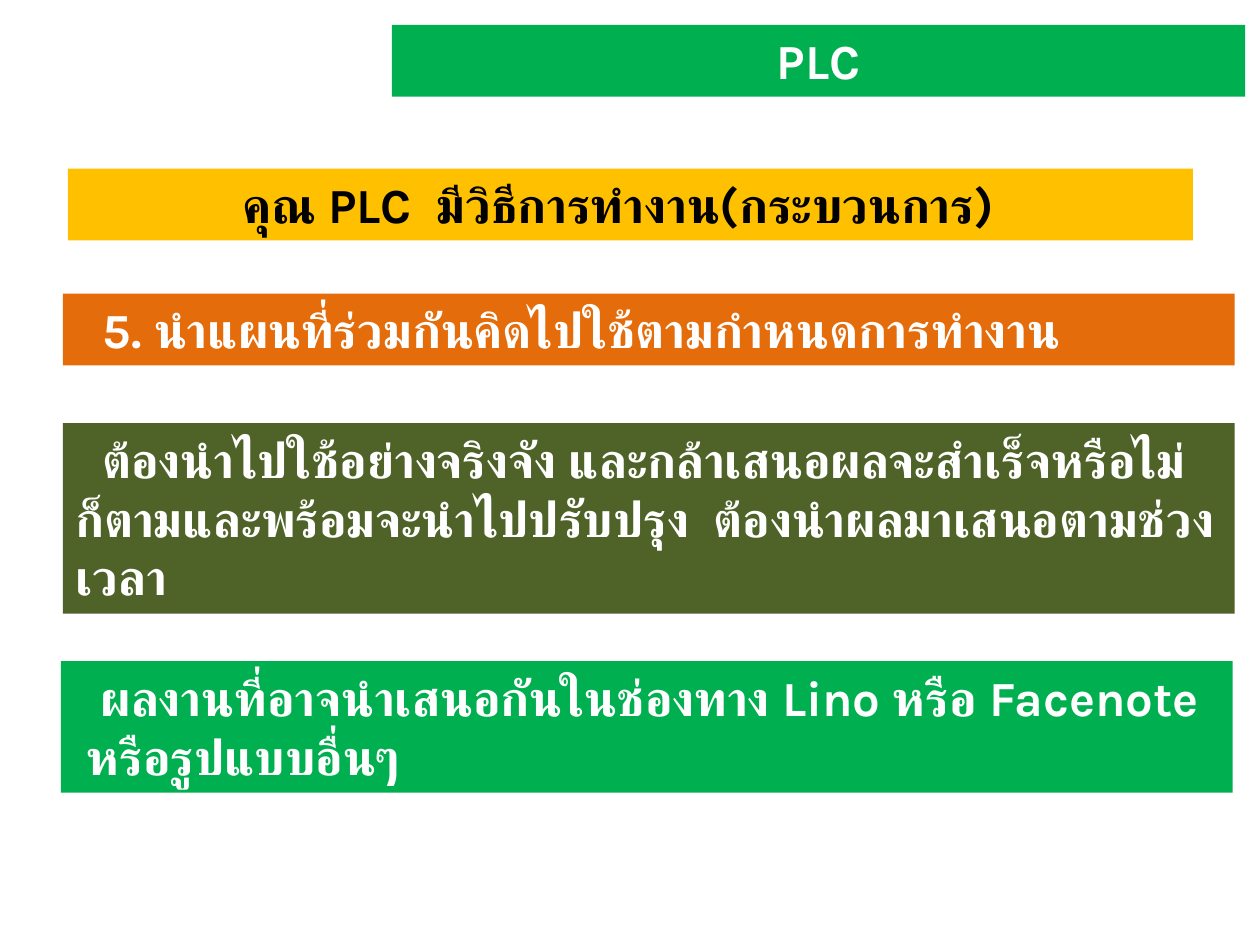
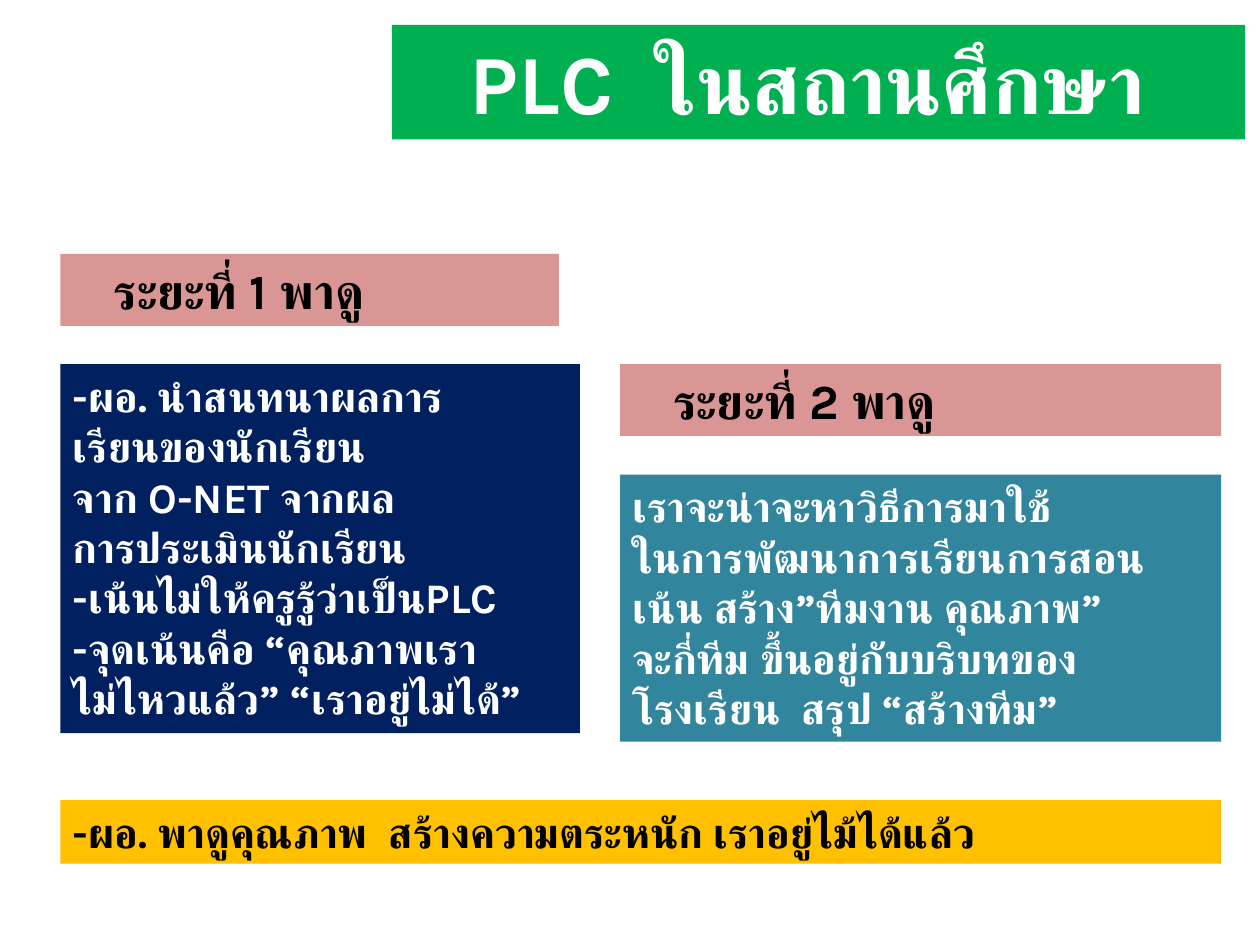
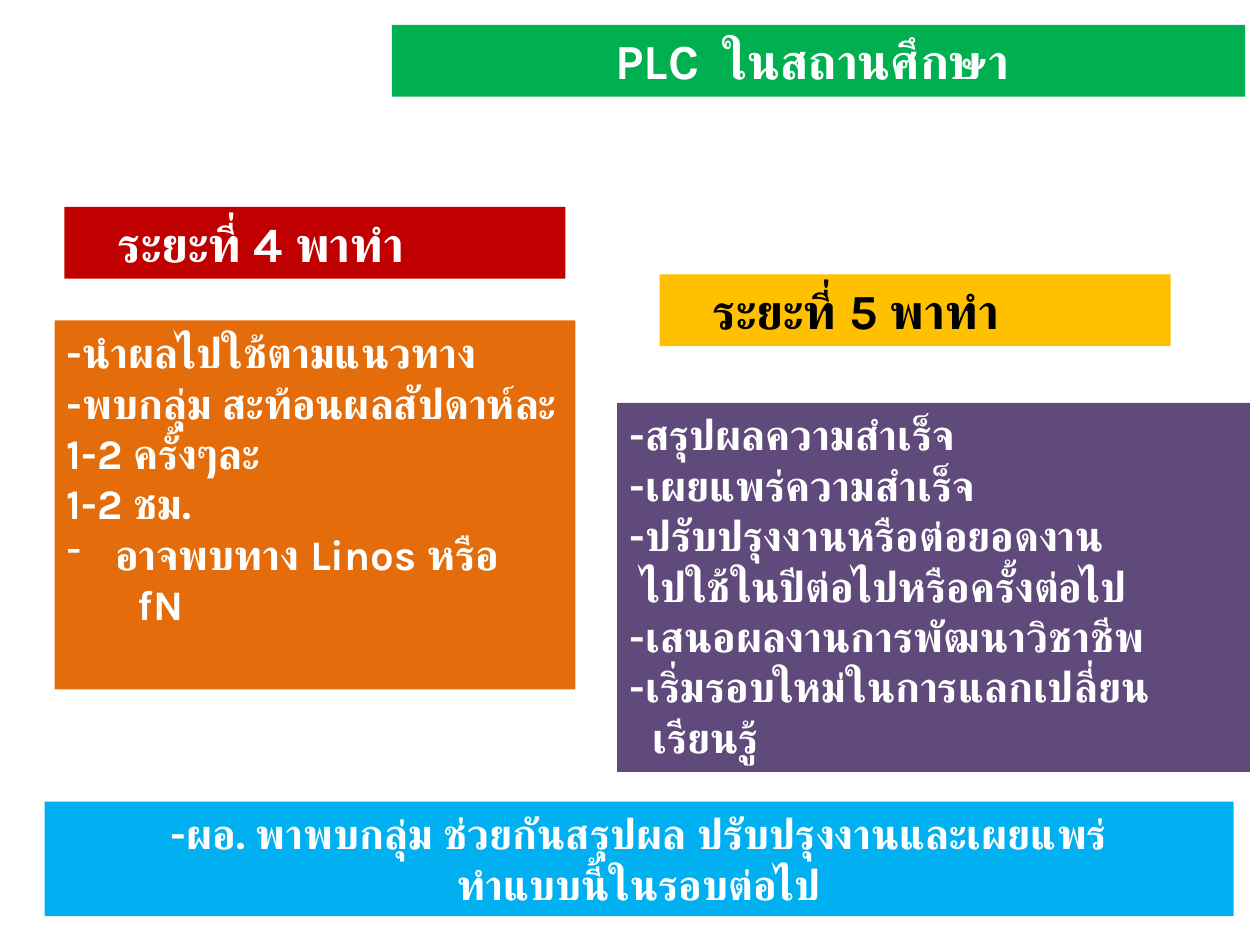
from dataclasses import dataclass

from lxml import etree
from pptx import Presentation
from pptx.dml.color import RGBColor
from pptx.enum import text as txt
from pptx.oxml import ns
from pptx.util import Cm, Pt

# Shared look
FONT = "Karla"
WHITE, BLACK = "FFFFFF", "000000"
GREEN, AMBER, ORANGE = "00B050", "FFC000", "E46C0A"
OLIVE, ROSE, NAVY, TEAL = "4F6228", "D99694", "002060", "31859C"
PURPLE, RED, SKY = "604A7B", "C00000", "00B0F0"
HEADING_SIZE, BODY_SIZE = 28, 24
BAND_HEIGHT = 1.45
INSET = 0.25
LEAD = 0.55          # first-line indent of the statements
PHASE_LEAD = 0.82    # first-line indent of the phase headings
HANG = 0.97          # hanging indent of a dashed item


@dataclass
class Para:
    """One paragraph; newlines in its words become line breaks."""
    words: str
    left: float = 0
    first: float = 0
    bullet: str = ""


def color(hex_code):
    return RGBColor.from_string(hex_code)


def add_run(paragraph, words, size, ink):
    run = paragraph.add_run()
    run.text = words
    run.font.size = Pt(size)
    run.font.bold = True
    run.font.color.rgb = color(ink)
    run.font.name = FONT
    # Thai letters take the complex-script font
    for tag in ("a:ea", "a:cs"):
        etree.SubElement(run._r.get_or_add_rPr(), ns.qn(tag), typeface=FONT)


def indent(paragraph, para):
    properties = paragraph._p.get_or_add_pPr()
    properties.set("marL", str(Cm(para.left)))
    properties.set("indent", str(Cm(para.first)))
    if para.bullet:
        etree.SubElement(properties, ns.qn("a:buChar"), char=para.bullet)


def add_panel(slide, place, fill, paras, size=BODY_SIZE, ink=WHITE,
              centred=False, right_inset=INSET):
    """Filled text panel; place is left, top, width, height in cm."""
    panel = slide.shapes.add_textbox(*map(Cm, place))
    panel.fill.solid()
    panel.fill.fore_color.rgb = color(fill)
    frame = panel.text_frame
    frame.word_wrap = True
    frame.margin_left, frame.margin_right = Cm(INSET), Cm(right_inset)
    for number, para in enumerate(paras):
        paragraph = frame.add_paragraph() if number else frame.paragraphs[0]
        indent(paragraph, para)
        paragraph.alignment = (txt.PP_ALIGN.CENTER if centred
                               else txt.PP_ALIGN.LEFT)
        for row, words in enumerate(para.words.split("\n")):
            if row:
                paragraph.add_line_break()
            add_run(paragraph, words, size, ink)


def add_title(slide, words, size=HEADING_SIZE, height=BAND_HEIGHT,
              right_inset=INSET):
    add_panel(slide, (7.9, 0.5, 17.2, height), GREEN, [Para(words)], size,
              centred=True, right_inset=right_inset)


def add_statement(slide, left, top, height, fill, words, hang=0.0):
    add_panel(slide, (left, top, 23.62, height), fill,
              [Para(words, hang, LEAD - hang)], HEADING_SIZE)


def add_phase(slide, left, top, width, fill, words, ink=BLACK):
    add_panel(slide, (left, top, width, BAND_HEIGHT), fill,
              [Para(words, first=PHASE_LEAD)], HEADING_SIZE, ink)


def build_process(slide):
    add_title(slide, "PLC")
    add_panel(slide, (1.37, 3.4, 22.68, BAND_HEIGHT), AMBER,
              [Para("คุณ PLC  มีวิธีการทำงาน(กระบวนการ)")],
              HEADING_SIZE, BLACK, centred=True, right_inset=0.75)
    add_statement(slide, 1.27, 5.92, BAND_HEIGHT, ORANGE,
                  "5. นำแผนที่ร่วมกันคิดไปใช้ตามกำหนดการทำงาน")
    add_statement(slide, 1.27, 8.53, 3.84, OLIVE,
                  "ต้องนำไปใช้อย่างจริงจัง และกล้าเสนอผลจะสำเร็จหรือไม่"
                  "ก็ตามและพร้อมจะนำไปปรับปรุง  ต้องนำผลมาเสนอตามช่วงเวลา")
    add_statement(slide, 1.23, 13.33, 2.65, GREEN,
                  "ผลงานที่อาจนำเสนอกันในช่องทาง Lino หรือ Facenote "
                  "หรือรูปแบบอื่นๆ", hang=0.27)


def build_first_phases(slide):
    left_column, right_column, top = 1.22, 12.5, 7.34
    add_title(slide, "PLC  ในสถานศึกษา", 48, 2.31, right_inset=0.7)

    # Phase 1
    add_phase(slide, left_column, 5.12, 10.05, ROSE, "ระยะที่ 1 พาดู")
    add_panel(slide, (left_column, top, 10.47, 7.44), NAVY, [
        Para("-ผอ. นำสนทนาผลการ\nเรียนของนักเรียน"),
        Para("จาก O-NET จากผล"),
        Para("การประเมินนักเรียน\n-เน้นไม่ให้ครูรู้ว่าเป็นPLC"),
        Para("-จุดเน้นคือ “คุณภาพเรา"),
        Para("ไม่ไหวแล้ว” “เราอยู่ไม่ได้”"),
    ])

    # Phase 2
    add_phase(slide, right_column, top, 12.12, ROSE, "ระยะที่ 2 พาดู")
    add_panel(slide, (right_column, 9.57, 12.12, 5.38), TEAL, [
        Para("เราจะน่าจะหาวิธีการมาใช้"),
        Para("ในการพัฒนาการเรียนการสอน"),
        Para("เน้น สร้าง”ทีมงาน คุณภาพ”"),
        Para("จะกี่ทีม ขึ้นอยู่กับบริบทของ\nโรงเรียน  สรุป “สร้างทีม”"),
    ])

    # Director's role
    add_panel(slide, (left_column, 16.13, 23.4, 1.28), AMBER,
              [Para("-ผอ. พาดูคุณภาพ  สร้างความตระหนัก เราอยู่ไม้ได้แล้ว")],
              ink=BLACK)


def build_last_phases(slide):
    add_title(slide, "PLC  ในสถานศึกษา", right_inset=0.5)

    # Phase 5
    add_phase(slide, 13.3, 5.53, 10.3, AMBER, "ระยะที่ 5 พาทำ")
    add_panel(slide, (12.44, 8.12, 12.76, 7.44), PURPLE, [
        Para("-สรุปผลความสำเร็จ"),
        Para("-เผยแพร่ความสำเร็จ\n-ปรับปรุงงานหรือต่อยอดงาน"),
        Para("ไปใช้ในปีต่อไปหรือครั้งต่อไป\n-เสนอผลงานการพัฒนาวิชาชีพ\n"
             "-เริ่มรอบใหม่ในการแลกเปลี่ยน", first=0.22),
        Para("เรียนรู้", first=0.46),
    ])

    # Phase 4
    add_phase(slide, 1.3, 4.17, 10.1, RED, "ระยะที่ 4 พาทำ", WHITE)
    add_panel(slide, (1.1, 6.46, 10.5, 7.44), ORANGE, [
        Para("-นำผลไปใช้ตามแนวทาง\n-พบกลุ่ม สะท้อนผลสัปดาห์ละ 1-2 ครั้งๆละ"),
        Para("1-2 ชม."),
        Para("อาจพบทาง Linos หรือ", HANG, -HANG, "-"),
        Para("fN", HANG + 0.46),
    ])

    # Director's role
    add_panel(slide, (0.9, 16.16, 23.97, 2.31), SKY,
              [Para("-ผอ. พาพบกลุ่ม ช่วยกันสรุปผล ปรับปรุงงานและเผยแพร่\n"
                    "ทำแบบนี้ในรอบต่อไป")], centred=True)


def main():
    deck = Presentation()
    deck.slide_width, deck.slide_height = Cm(25.4), Cm(19.05)
    blank = deck.slide_layouts[6]
    for build in (build_process, build_first_phases, build_last_phases):
        build(deck.slides.add_slide(blank))
    deck.save("out.pptx")


if __name__ == "__main__":
    main()
